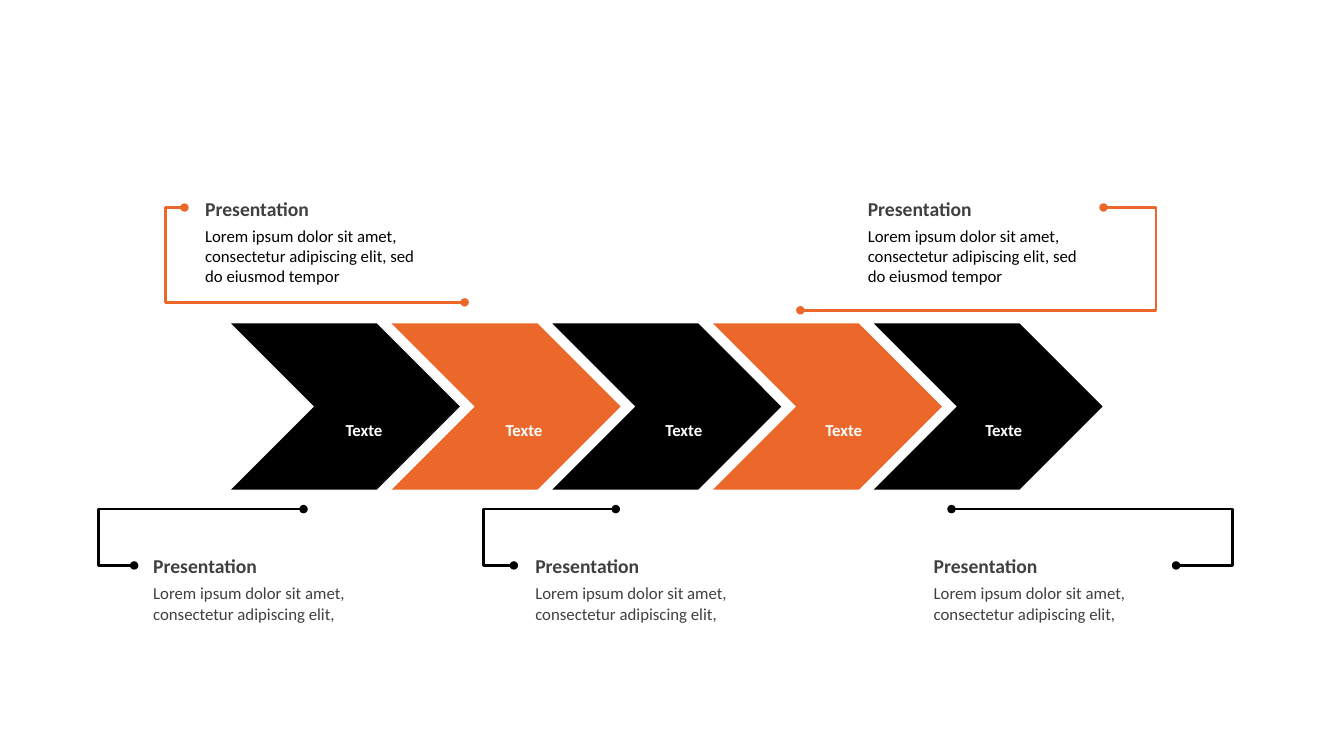
from lxml.etree import SubElement
from pptx import Presentation
from pptx.dml.color import RGBColor
from pptx.enum.shapes import MSO_CONNECTOR, MSO_SHAPE
from pptx.enum.text import MSO_AUTO_SIZE, PP_ALIGN
from pptx.oxml.ns import qn
from pptx.util import Cm, Pt

BLACK = RGBColor(0x00, 0x00, 0x00)
ORANGE = RGBColor(0xEC, 0x67, 0x2A)
GREY = RGBColor(0x40, 0x40, 0x40)
WHITE = RGBColor(0xFF, 0xFF, 0xFF)

SHORT = "Lorem ipsum dolor sit amet, consectetur adipiscing elit,"
LONG = SHORT + " sed do eiusmod tempor"


class Board:
    """Holds the text style and the slide, and draws each kind of element."""

    font = "Calibri"

    def __init__(self, slide):
        self.shapes = slide.shapes

    def arrow(self, left, color):
        """Draw one chevron of the process band."""
        shape = self.shapes.add_shape(
            MSO_SHAPE.CHEVRON, Cm(left), Cm(8.15), Cm(5.77), Cm(4.19))
        shape.shadow.inherit = False
        shape.fill.solid()
        shape.fill.fore_color.rgb = color
        shape.line.fill.background()

    def text(self, words, box, size, color, bold=False, align=PP_ALIGN.LEFT):
        """Draw a wrapped text box without side margins."""
        frame = self.shapes.add_textbox(*map(Cm, box)).text_frame
        frame.word_wrap = True
        frame.auto_size = MSO_AUTO_SIZE.SHAPE_TO_FIT_TEXT
        frame.margin_left = frame.margin_right = 0
        frame.text = words
        para = frame.paragraphs[0]
        para.alignment = align
        font = para.runs[0].font
        font.name = self.font
        font.size = Pt(size)
        font.bold = bold
        font.color.rgb = color

    def note(self, left, top, words, color, height):
        """Draw a heading with its paragraph below."""
        self.text("Presentation", (left, top, 5.68, 0.86), 14, GREY, True)
        self.text(words, (left, top + 0.73, 5.68, height), 12, color)

    def link(self, start, end, bend, color):
        """Draw a bent line with round ends that turns at the given x."""
        line = self.shapes.add_connector(
            MSO_CONNECTOR.ELBOW, *map(Cm, start + end))
        line.line.color.rgb = color
        line.line.width = Pt(2)
        props = line.element.spPr
        for tag in ("a:headEnd", "a:tailEnd"):
            SubElement(props.find(qn("a:ln")), qn(tag), type="oval")
        SubElement(props, qn("a:effectLst"))
        ratio = (bend - start[0]) / (end[0] - start[0])
        guides = props.find(qn("a:prstGeom")).find(qn("a:avLst"))
        SubElement(guides, qn("a:gd"), name="adj1",
                   fmla=f"val {round(ratio * 100000)}")


def main():
    """Build the slide and save it."""
    deck = Presentation()
    deck.slide_width, deck.slide_height = Cm(33.87), Cm(19.05)
    board = Board(deck.slides.add_slide(deck.slide_layouts[6]))

    for step in range(5):
        board.arrow(5.82 + 4.05 * step, ORANGE if step % 2 else BLACK)

    for left, start, end, bend in (
            (3.86, 3.38, 7.65, 2.49),
            (13.49, 12.95, 15.52, 12.19),
            (23.53, 29.64, 23.98, 31.06)):
        board.link((start, 14.25), (end, 12.83), bend, BLACK)
        board.note(left, 13.84, SHORT, GREY, 1.27)

    for left, start, end, bend in (
            (5.17, (4.65, 5.23), (11.71, 7.62), 4.17),
            (21.87, (20.17, 7.82), (27.81, 5.23), 29.13)):
        board.link(start, end, bend, ORANGE)
        board.note(left, 4.83, LONG, BLACK, 1.8)

    for step in range(5):
        box = (7.97 + 4.03 * step, 10.46, 2.41, 0.76)
        board.text("Texte", box, 12, WHITE, True, PP_ALIGN.CENTER)

    deck.save("out.pptx")


if __name__ == "__main__":
    main()
